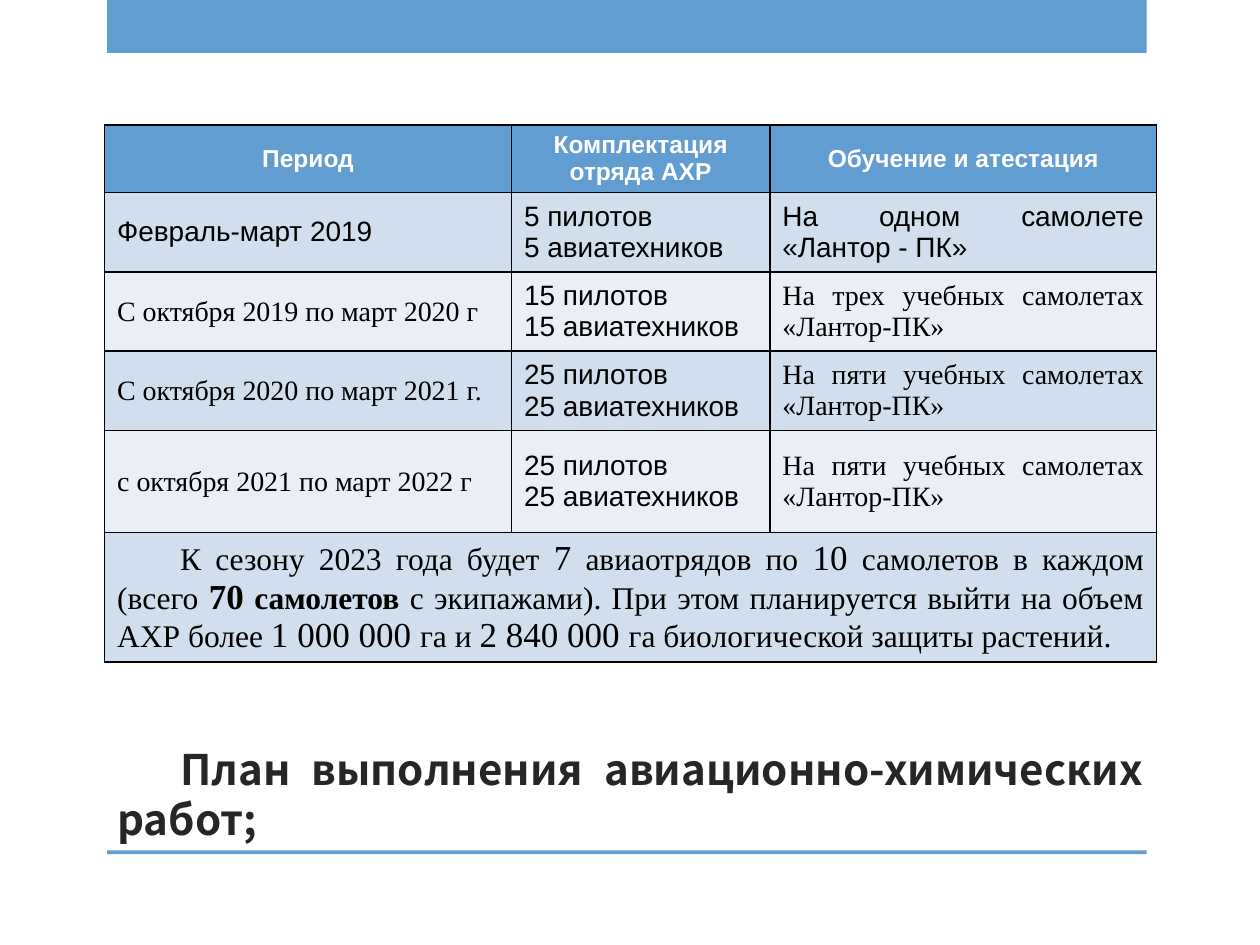
"""Build the slide with the schedule of aviation-chemical works."""
from dataclasses import dataclass

from lxml import etree
from pptx import Presentation
from pptx.dml.color import RGBColor
from pptx.enum.shapes import MSO_SHAPE
from pptx.enum.text import MSO_ANCHOR, MSO_AUTO_SIZE, PP_ALIGN
from pptx.oxml.ns import qn
from pptx.slide import Slide
from pptx.table import _Cell
from pptx.text.text import _Paragraph
from pptx.util import Inches, Pt

RECTANGLE = MSO_SHAPE.RECTANGLE
MIDDLE, BOTTOM = MSO_ANCHOR.MIDDLE, MSO_ANCHOR.BOTTOM
CENTER, JUSTIFY = PP_ALIGN.CENTER, PP_ALIGN.JUSTIFY
NO_AUTOFIT = MSO_AUTO_SIZE.NONE

BLUE = RGBColor(0x62, 0x9D, 0xD1)
PALE_BLUE = RGBColor(0xD1, 0xDE, 0xEE)
PALE_GREY = RGBColor(0xEA, 0xEF, 0xF7)
WHITE = RGBColor(0xFF, 0xFF, 0xFF)
BLACK = RGBColor(0x00, 0x00, 0x00)
DARK = RGBColor(0x26, 0x26, 0x26)

SANS, SERIF, TITLE_FONT = "Arial", "Times New Roman", "Noto Sans CJK KR"


@dataclass(frozen=True)
class Style:
    font: str
    size: int
    color: RGBColor = BLACK
    bold: bool = False


@dataclass(frozen=True)
class Stage:
    period: str
    crew: int
    training: str
    font: str = SERIF


HEADING = Style(SANS, 14, WHITE, True)
TITLE = Style(TITLE_FONT, 24, DARK, True)
PLAIN, LARGE = Style(SERIF, 18), Style(SERIF, 20)
PLAIN_BOLD, LARGE_BOLD = Style(SERIF, 18, bold=True), Style(SERIF, 20, bold=True)

HEADINGS = ["Период", "Комплектация отряда АХР", "Обучение и атестация"]
STAGES = [
    Stage("Февраль-март 2019", 5, "На одном самолете «Лантор - ПК»", SANS),
    Stage("С октября 2019 по март 2020 г", 15, "На трех учебных самолетах «Лантор-ПК»"),
    Stage("С октября 2020 по март 2021 г.", 25, "На пяти учебных самолетах «Лантор-ПК»"),
    Stage("с октября 2021 по март 2022 г", 25, "На пяти учебных самолетах «Лантор-ПК»"),
]
SUMMARY = [
    ("К сезону 2023 года будет ", PLAIN),
    ("7", LARGE),
    (" авиаотрядов по ", PLAIN),
    ("10", LARGE),
    (" самолетов в каждом (всего ", PLAIN),
    ("70", LARGE_BOLD),
    (" самолетов ", PLAIN_BOLD),
    ("с экипажами). При этом планируется выйти на объем АХР более ", PLAIN),
    ("1 000 000 ", LARGE),
    ("га и ", PLAIN),
    ("2 840 000 ", LARGE),
    ("га биологической защиты растений.", PLAIN),
]
COLUMN_WIDTHS = [3.23, 2.05, 3.07]
ROW_HEIGHTS = [0.45, 0.63, 0.63, 0.63, 0.81, 0.81]


def add_run(paragraph: _Paragraph, text: str, style: Style) -> None:
    """Append one run of text in the given style."""
    run = paragraph.add_run()
    run.text = text
    run.font.name = style.font
    run.font.size = Pt(style.size)
    run.font.bold = style.bold
    run.font.color.rgb = style.color


def indent_first_line(paragraph: _Paragraph) -> None:
    """Indent the first line by half an inch."""
    properties = paragraph._p.get_or_add_pPr()
    properties.set("marL", "0")
    properties.set("indent", str(Inches(0.5)))


def add_bar(slide: Slide, top: float, height: float) -> None:
    """Draw a blue bar across the content width."""
    bar = slide.shapes.add_shape(
        RECTANGLE, Inches(0.85), Inches(top), Inches(8.25), Inches(height))
    bar.shadow.inherit = False
    bar.fill.solid()
    bar.fill.fore_color.rgb = BLUE
    bar.line.fill.background()


def format_cell(cell: _Cell, color: RGBColor) -> None:
    """Give a cell black borders, a fill and middle anchoring."""
    properties = cell._tc.get_or_add_tcPr()
    for side in ("lnL", "lnR", "lnT", "lnB"):
        border = etree.SubElement(properties, qn(f"a:{side}"), w=str(Pt(1)))
        fill = etree.SubElement(border, qn("a:solidFill"))
        etree.SubElement(fill, qn("a:srgbClr"), val=str(BLACK))
    cell.fill.solid()
    cell.fill.fore_color.rgb = color
    cell.vertical_anchor = MIDDLE


def write_cell(cell: _Cell, lines: list[str], style: Style, align: PP_ALIGN) -> None:
    """Write each line as a paragraph of the cell."""
    for index, line in enumerate(lines):
        frame = cell.text_frame
        paragraph = frame.add_paragraph() if index else frame.paragraphs[0]
        paragraph.alignment = align
        add_run(paragraph, line, style)


def add_schedule(slide: Slide) -> None:
    """Add the table of stages with its summary row."""
    schedule = slide.shapes.add_table(
        len(ROW_HEIGHTS), len(COLUMN_WIDTHS), Inches(0.83), Inches(0.99),
        Inches(sum(COLUMN_WIDTHS)), Inches(sum(ROW_HEIGHTS))).table
    for column, width in zip(schedule.columns, COLUMN_WIDTHS):
        column.width = Inches(width)
    for index, (row, height) in enumerate(zip(schedule.rows, ROW_HEIGHTS)):
        row.height = Inches(height)
        band = PALE_BLUE if index % 2 else PALE_GREY
        for cell in row.cells:
            format_cell(cell, band if index else BLUE)

    for cell, heading in zip(schedule.rows[0].cells, HEADINGS):
        write_cell(cell, [heading], HEADING, CENTER)
    for index, stage in enumerate(STAGES, start=1):
        period, crew, training = schedule.rows[index].cells
        stage_style = Style(stage.font, 16)
        crew_lines = [f"{stage.crew} пилотов", f"{stage.crew} авиатехников"]
        write_cell(period, [stage.period], stage_style, JUSTIFY)
        write_cell(crew, crew_lines, Style(SANS, 16), JUSTIFY)
        write_cell(training, [stage.training], stage_style, JUSTIFY)

    last = len(ROW_HEIGHTS) - 1
    summary = schedule.cell(last, 0)
    summary.merge(schedule.cell(last, len(COLUMN_WIDTHS) - 1))
    paragraph = summary.text_frame.paragraphs[0]
    paragraph.alignment = JUSTIFY
    indent_first_line(paragraph)
    for text, style in SUMMARY:
        add_run(paragraph, text, style)


def add_title(slide: Slide) -> None:
    """Place and fill the title at the bottom of the slide."""
    title = slide.shapes.title
    title.left, title.top = Inches(0.83), Inches(5.8)
    title.width, title.height = Inches(8.34), Inches(0.95)
    frame = title.text_frame
    frame.word_wrap = True
    frame.auto_size = NO_AUTOFIT
    frame.vertical_anchor = BOTTOM
    paragraph = frame.paragraphs[0]
    paragraph.alignment = JUSTIFY
    indent_first_line(paragraph)
    add_run(paragraph, "План выполнения авиационно-химических работ;", TITLE)


def main() -> None:
    """Build and save the presentation."""
    deck = Presentation()
    deck.slide_width, deck.slide_height = Inches(10), Inches(7.5)
    slide = deck.slides.add_slide(deck.slide_layouts.get_by_name("Title Only"))
    add_bar(slide, 0, 0.42)
    add_bar(slide, 6.75, 0.03)
    add_title(slide)
    add_schedule(slide)
    deck.save("out.pptx")


if __name__ == "__main__":
    main()
